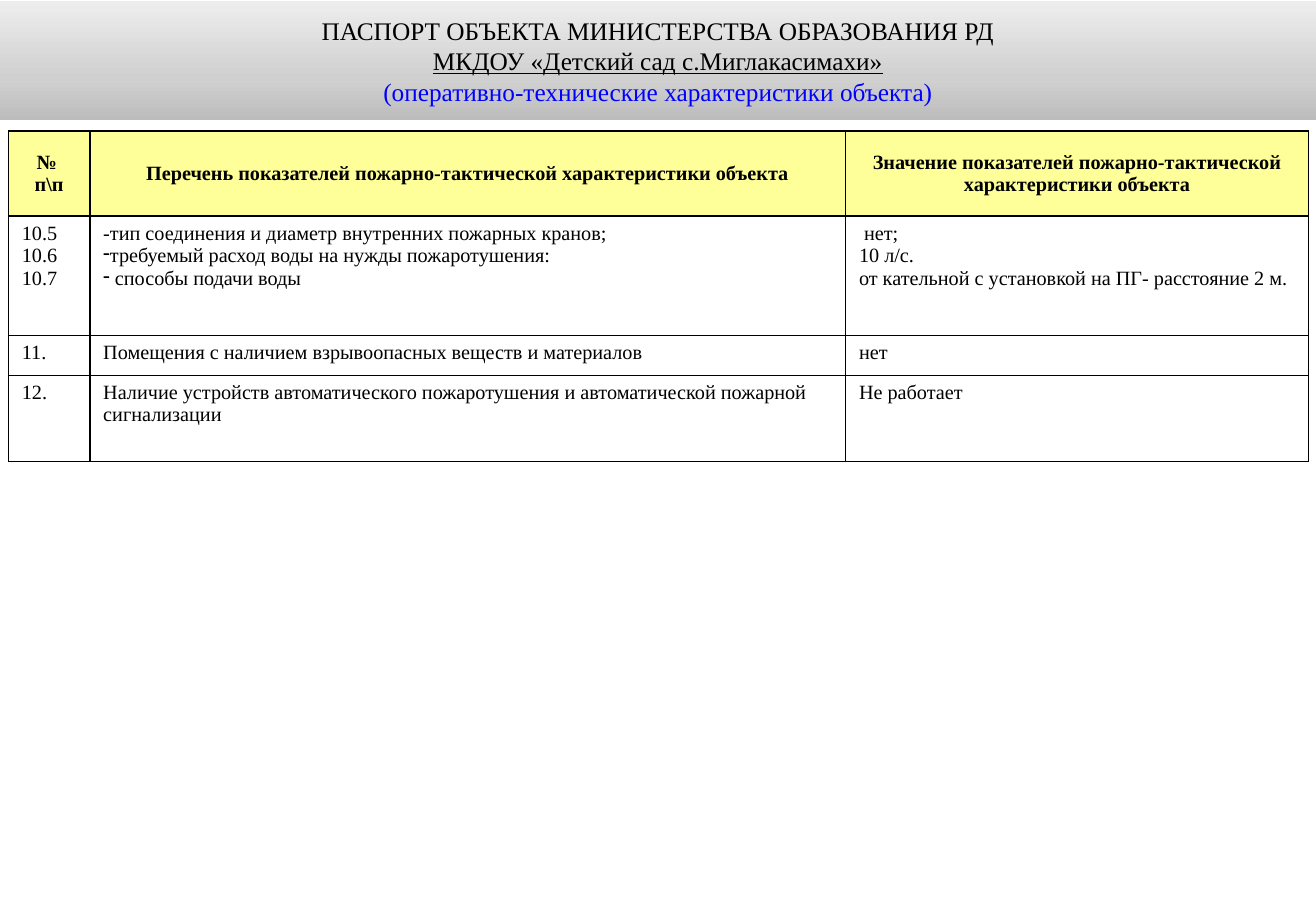
from copy import deepcopy
from dataclasses import dataclass

from lxml import etree
from pptx import Presentation
from pptx.dml.color import RGBColor
from pptx.enum.shapes import MSO_SHAPE
from pptx.enum.text import MSO_ANCHOR, PP_ALIGN
from pptx.oxml.ns import qn
from pptx.util import Inches, Pt

RECTANGLE = MSO_SHAPE.RECTANGLE
TOP, MIDDLE = MSO_ANCHOR.TOP, MSO_ANCHOR.MIDDLE
LEFT, CENTER = PP_ALIGN.LEFT, PP_ALIGN.CENTER


@dataclass(frozen=True)
class Theme:
    font: str = "Times New Roman"
    title_size: float = 15
    table_size: float = 12
    text: str = "000000"
    accent: str = "0000FF"
    border: str = "000000"
    border_width: float = 1
    header_fill: str = "FFFF99"
    body_fill: str = "FFFFFF"
    banner_stops: tuple = ((0, "BCBCBC"), (0.35, "D0D0D0"), (1, "EDEDED"))


@dataclass(frozen=True)
class Line:
    text: str
    color: str = "000000"
    underline: bool = False
    bullet: str = ""


@dataclass(frozen=True)
class Row:
    height: float
    cells: tuple[tuple[Line, ...], ...]


THEME = Theme()
SLIDE_WIDTH, SLIDE_HEIGHT = 10.83, 7.5
COLUMN_WIDTHS = (0.67, 6.22, 3.81)

TITLE = (
    Line("ПАСПОРТ ОБЪЕКТА МИНИСТЕРСТВА ОБРАЗОВАНИЯ РД"),
    Line("МКДОУ «Детский сад с.Миглакасимахи»", underline=True),
    Line("(оперативно-технические характеристики объекта)", color=THEME.accent),
)

ROWS = (
    Row(0.7, (
        (Line("№ "), Line("п\\п")),
        (Line("Перечень показателей пожарно-тактической характеристики объекта"),),
        (Line("Значение показателей пожарно-тактической характеристики объекта"),),
    )),
    Row(0.98, (
        (Line("10.5"), Line("10.6"), Line("10.7")),
        (
            Line("-тип соединения и диаметр внутренних пожарных кранов;"),
            Line("требуемый расход воды на нужды пожаротушения:", bullet="-"),
            Line(" способы подачи воды", bullet="-"),
        ),
        (
            Line(" нет;"),
            Line("10 л/с."),
            Line("от кательной с установкой на ПГ- расстояние 2 м."),
        ),
    )),
    Row(0.33, (
        (Line("11."),),
        (Line("Помещения с наличием взрывоопасных веществ и материалов"),),
        (Line("нет"),),
    )),
    Row(0.71, (
        (Line("12."),),
        (Line("Наличие устройств автоматического пожаротушения и "
              "автоматической пожарной сигнализации"),),
        (Line("Не работает"),),
    )),
)


def write_lines(text_frame, lines: tuple[Line, ...], *, size: float,
                bold: bool = False, align=LEFT) -> None:
    for index, line in enumerate(lines):
        paragraph = text_frame.add_paragraph() if index else text_frame.paragraphs[0]
        paragraph.alignment = align
        if line.bullet:
            properties = paragraph._p.get_or_add_pPr()
            properties.set("marL", "0")
            properties.set("indent", "0")
            etree.SubElement(properties, qn("a:buChar"), char=line.bullet)
        run = paragraph.add_run()
        run.text = line.text
        run.font.name = THEME.font
        run.font.size = Pt(size)
        run.font.bold = bold
        run.font.underline = line.underline
        run.font.color.rgb = RGBColor.from_string(line.color)


def fill_gradient(shape, stops: tuple) -> None:
    """Fill the shape with colour stops running from bottom to top."""
    shape.fill.gradient()
    shape.fill.gradient_angle = 90
    stop_list = shape._element.spPr.find(".//" + qn("a:gsLst"))
    sample = stop_list[0]
    stop_list[:] = [deepcopy(sample) for _ in stops]
    for stop, (position, color) in zip(shape.fill.gradient_stops, stops):
        stop.position = position
        stop.color.rgb = RGBColor.from_string(color)


def add_banner(slide) -> None:
    banner = slide.shapes.add_shape(
        RECTANGLE, 0, Inches(0.01), Inches(SLIDE_WIDTH), Inches(0.98))
    banner.shadow.inherit = False
    banner.line.fill.background()
    fill_gradient(banner, THEME.banner_stops)
    frame = banner.text_frame
    frame.word_wrap = True
    frame.vertical_anchor = MIDDLE
    frame.margin_left = frame.margin_right = Inches(0.09)
    frame.margin_top = frame.margin_bottom = Inches(0.05)
    write_lines(frame, TITLE, size=THEME.title_size, align=CENTER)


def add_borders(cell) -> None:
    properties = cell._tc.get_or_add_tcPr()
    for side in ("lnL", "lnR", "lnT", "lnB"):
        border = etree.SubElement(
            properties, qn(f"a:{side}"), w=str(Pt(THEME.border_width)))
        fill = etree.SubElement(border, qn("a:solidFill"))
        etree.SubElement(fill, qn("a:srgbClr"), val=THEME.border)


def format_cell(cell, lines: tuple[Line, ...], is_header: bool) -> None:
    cell.margin_left = cell.margin_right = Inches(0.11)
    cell.margin_top = cell.margin_bottom = Inches(0.05)
    cell.vertical_anchor = MIDDLE if is_header else TOP
    add_borders(cell)
    cell.fill.solid()
    cell.fill.fore_color.rgb = RGBColor.from_string(
        THEME.header_fill if is_header else THEME.body_fill)
    write_lines(cell.text_frame, lines, size=THEME.table_size, bold=is_header,
                align=CENTER if is_header else LEFT)


def add_indicator_table(slide) -> None:
    table = slide.shapes.add_table(
        len(ROWS), len(COLUMN_WIDTHS), Inches(0.07), Inches(1.08),
        Inches(sum(COLUMN_WIDTHS)), Inches(sum(row.height for row in ROWS))).table
    for column, width in zip(table.columns, COLUMN_WIDTHS):
        column.width = Inches(width)
    for row_index, row in enumerate(ROWS):
        table.rows[row_index].height = Inches(row.height)
        for column_index, lines in enumerate(row.cells):
            format_cell(table.cell(row_index, column_index), lines, row_index == 0)


def main() -> None:
    presentation = Presentation()
    presentation.slide_width = Inches(SLIDE_WIDTH)
    presentation.slide_height = Inches(SLIDE_HEIGHT)
    slide = presentation.slides.add_slide(presentation.slide_layouts[6])
    add_indicator_table(slide)
    add_banner(slide)
    presentation.save("out.pptx")


if __name__ == "__main__":
    main()
